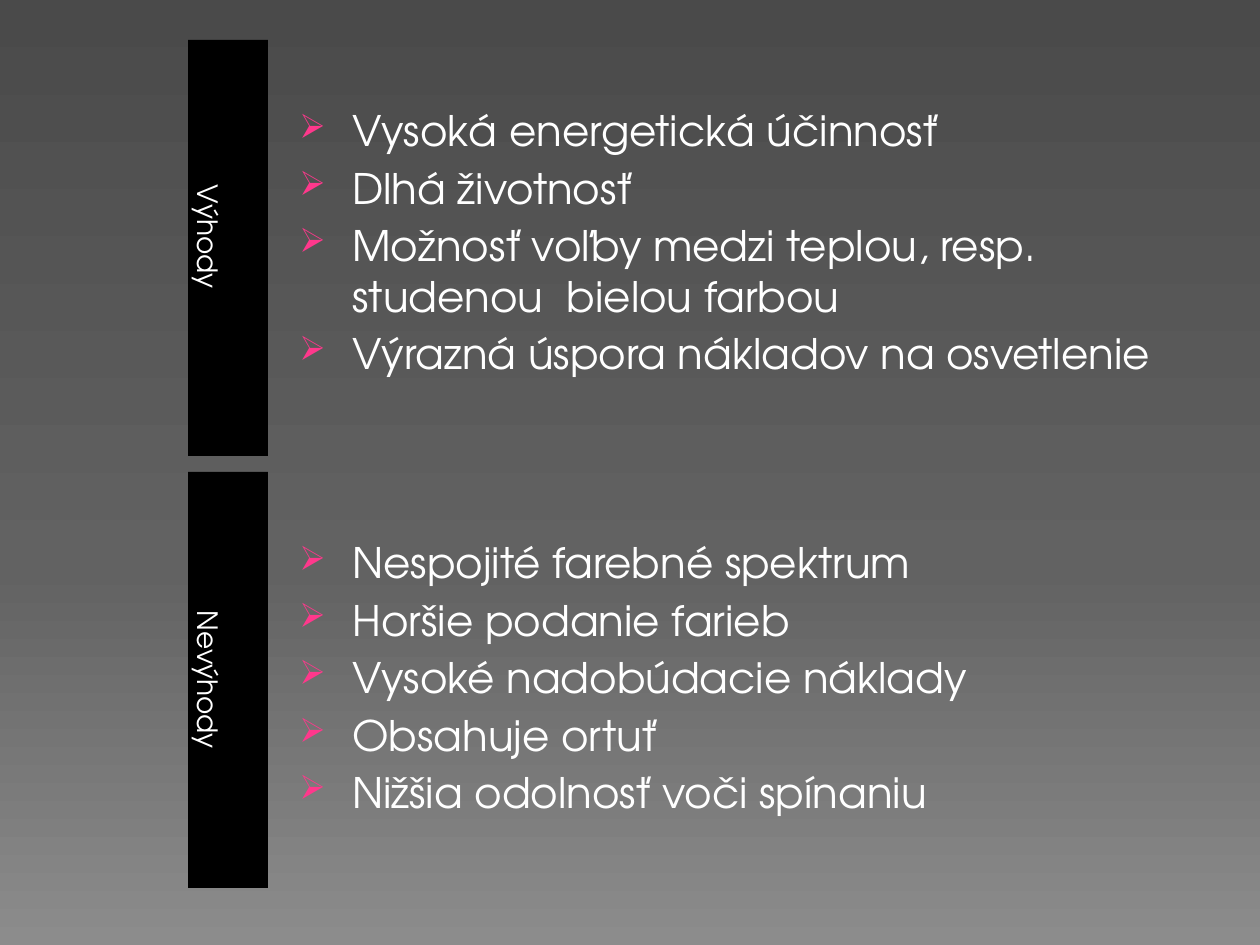
from copy import deepcopy

from lxml.etree import SubElement
from pptx import Presentation
from pptx.dml.color import RGBColor
from pptx.enum.shapes import MSO_SHAPE
from pptx.enum.text import MSO_ANCHOR, PP_ALIGN
from pptx.oxml.ns import qn
from pptx.util import Pt

PX = 914400 // 126
FONT = "TeX Gyre Adventor"
WHITE = RGBColor(0xFF, 0xFF, 0xFF)
BLACK = RGBColor(0x00, 0x00, 0x00)
PINK = RGBColor(0xFF, 0x38, 0x8C)
BACKDROP = (
    (0, RGBColor(0x4A, 0x4A, 0x4A)),
    (0.6, RGBColor(0x62, 0x62, 0x62)),
    (1, RGBColor(0x8C, 0x8C, 0x8C)),
)
TOP, HEIGHT, PITCH = 40, 416, 432
SECTIONS = (
    ("Výhody\t", (
        "Vysoká energetická účinnosť",
        "Dlhá životnosť",
        "Možnosť voľby medzi teplou, resp. studenou  bielou farbou",
        "Výrazná úspora nákladov na osvetlenie",
    )),
    ("Nevýhody", (
        "Nespojité farebné spektrum",
        "Horšie podanie farieb",
        "Vysoké nadobúdacie náklady",
        "Obsahuje ortuť",
        "Nižšia odolnosť voči spínaniu",
    )),
)


def px(*values):
    """Turn pixel lengths into EMU."""
    return [v * PX for v in values]


def assign(target, values):
    """Set each named attribute on the target."""
    for name, value in values.items():
        setattr(target, name, value)


def set_backdrop(s):
    """Fill the slide background with the vertical gradient."""
    fill = s.background.fill
    fill.gradient()
    fill.gradient_angle = 270
    stops = s.element.find(".//" + qn("a:gsLst"))
    stops.append(deepcopy(stops[-1]))
    for stop, (position, color) in zip(fill.gradient_stops, BACKDROP):
        stop.color.rgb = color
        stop.position = position


def add_text(p, text, size):
    """Add one white run to the paragraph."""
    r = p.add_run()
    r.text = text
    assign(r.font, {"name": FONT, "size": Pt(size)})
    r.font.color.rgb = WHITE


def add_bullet(p):
    """Give the paragraph a hanging pink arrow bullet."""
    pPr = p._p.get_or_add_pPr()
    pPr.set("marL", str(62 * PX))
    pPr.set("indent", str(-53 * PX))
    color = SubElement(pPr, qn("a:buClr"))
    SubElement(color, qn("a:srgbClr"), val=str(PINK))
    SubElement(pPr, qn("a:buSzPct"), val="80000")
    SubElement(pPr, qn("a:buChar"), char="➢")


def add_label(s, top, text):
    """Add a black bar with its heading turned to read downwards."""
    sp = s.shapes.add_shape(MSO_SHAPE.RECTANGLE, *px(188, top, 80, HEIGHT))
    sp.shadow.inherit = False
    sp.fill.solid()
    sp.fill.fore_color.rgb = BLACK
    sp.line.fill.background()
    tf = sp.text_frame
    sides = ("left", "top", "right", "bottom")
    assign(tf, {f"margin_{side}": 4 * PX for side in sides})
    assign(tf, {"word_wrap": True, "vertical_anchor": MSO_ANCHOR.BOTTOM})
    tf._txBody.bodyPr.set("vert", "vert")
    p = tf.paragraphs[0]
    p.alignment = PP_ALIGN.CENTER
    add_text(p, text, 16)


def add_list(s, top, items):
    """Add the bulleted points beside a bar."""
    tf = s.shapes.add_textbox(*px(278, top, 945, HEIGHT)).text_frame
    assign(tf, {"word_wrap": True, "margin_top": 65 * PX})
    for i, item in enumerate(items):
        p = tf.add_paragraph() if i else tf.paragraphs[0]
        p.space_before = Pt(4)
        add_bullet(p)
        add_text(p, item, 24)


def main():
    """Build and save the slide."""
    prs = Presentation()
    prs.slide_width, prs.slide_height = px(1260, 945)
    s = prs.slides.add_slide(prs.slide_layouts[6])
    set_backdrop(s)
    for i, (label, items) in enumerate(SECTIONS):
        top = TOP + i * PITCH
        add_label(s, top, label)
        add_list(s, top, items)
    prs.save("out.pptx")


if __name__ == "__main__":
    main()
